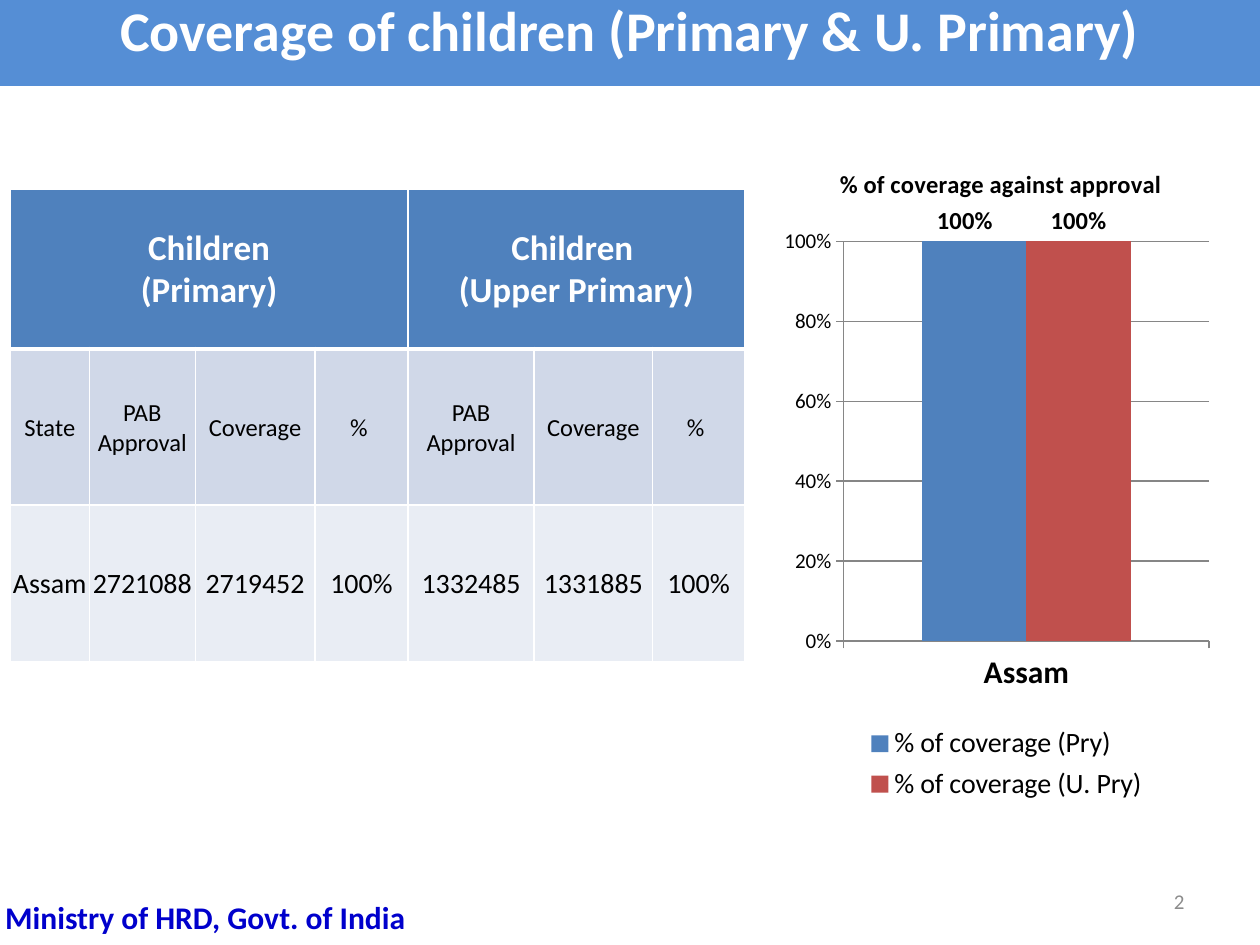
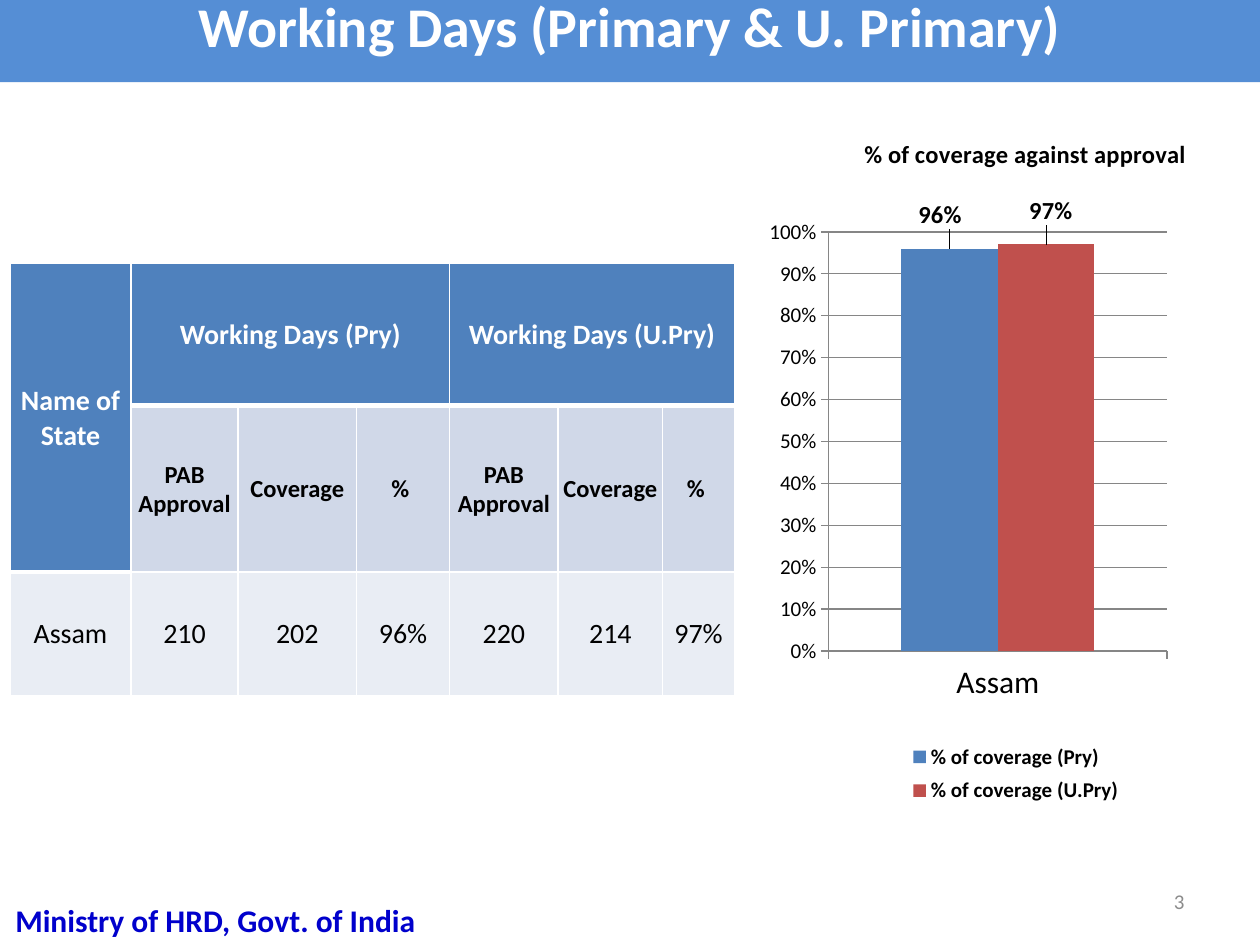
from dataclasses import dataclass
from typing import NamedTuple

from lxml.etree import SubElement
from pptx import Presentation
from pptx.chart.data import CategoryChartData
from pptx.dml.color import RGBColor
from pptx.enum.chart import (XL_CHART_TYPE, XL_LABEL_POSITION, XL_LEGEND_POSITION,
                             XL_TICK_MARK)
from pptx.enum.text import MSO_ANCHOR, MSO_AUTO_SIZE, PP_ALIGN
from pptx.oxml.ns import qn
from pptx.util import Inches, Pt

WIDE, HIGH = Inches(10), Inches(7.5)


@dataclass(frozen=True)
class Theme:
    font: str = "Calibri"
    band: str = "558ED5"
    head: str = "4F81BD"
    sub: str = "D0D8E8"
    row: str = "E9EDF4"
    white: str = "FFFFFF"
    black: str = "000000"
    foot: str = "0000CC"
    gray: str = "8C8C8C"
    axis: str = "868686"
    bars: tuple[str, ...] = ("4F81BD", "C0504D")
    title: int = 32
    large: int = 18
    body: int = 16
    label: int = 14
    small: int = 12


THEME = Theme()


class Box(NamedTuple):
    """Place on the slide, in percent of its width and height."""
    x: float
    y: float
    w: float
    h: float


class Style(NamedTuple):
    size: int
    color: str
    bold: bool = False


class Head(NamedTuple):
    text: str
    col: int
    cols: int
    rows: int = 1


@dataclass(frozen=True)
class Grid:
    box: Box
    cols: list[float]
    rows: list[float]
    heads: list[Head]
    sub: list[str]
    data: list[str]
    size: int
    bold: bool


@dataclass(frozen=True)
class Graph:
    """Inner places are shares of the chart's own size."""
    box: Box
    names: list[str]
    vals: list[float]
    step: float
    bold: bool
    side: XL_LEGEND_POSITION
    key: Style
    title: tuple[float, float]
    plot: tuple[float, ...]
    legend: tuple[float, ...]
    shifts: list[tuple[float, float]]


@dataclass(frozen=True)
class Page:
    num: str
    title: str
    band: Box
    foot: Box
    grid: Grid
    graph: Graph


def span(box: Box) -> tuple[int, ...]:
    return across(box.x), down(box.y), across(box.w), down(box.h)


def across(part: float) -> int:
    return round(WIDE * part / 100)


def down(part: float) -> int:
    return round(HIGH * part / 100)


def paint(fill, color: str) -> None:
    fill.solid()
    fill.fore_color.rgb = RGBColor.from_string(color)


def dress(font, style: Style) -> None:
    font.name = THEME.font
    font.size = Pt(style.size)
    font.bold = style.bold
    font.color.rgb = RGBColor.from_string(style.color)


def write(frame, text: str, style: Style, align: PP_ALIGN = PP_ALIGN.CENTER) -> None:
    for i, line in enumerate(text.split("\n")):
        para = frame.add_paragraph() if i else frame.paragraphs[0]
        para.alignment = align
        run = para.add_run()
        run.text = line
        dress(run.font, style)


def add_title(slide, page: Page) -> None:
    band = slide.shapes.title
    band.left, band.top, band.width, band.height = span(page.band)
    paint(band.fill, THEME.band)
    frame = band.text_frame
    frame.vertical_anchor = MSO_ANCHOR.MIDDLE
    frame.auto_size = MSO_AUTO_SIZE.SHAPE_TO_FIT_TEXT
    write(frame, page.title, Style(THEME.title, THEME.white, True))
    frame.paragraphs[0].line_spacing = 0.9


def add_text(slide, box: Box, text: str, style: Style, align: PP_ALIGN,
             anchor: MSO_ANCHOR) -> None:
    frame = slide.shapes.add_textbox(*span(box)).text_frame
    frame.word_wrap = True
    frame.vertical_anchor = anchor
    write(frame, text, style, align)


def edge(cell, widths: dict[str, int]) -> None:
    """Give the cell white borders, with widths in points by side."""
    props = cell._tc.get_or_add_tcPr()
    for i, (side, width) in enumerate(widths.items()):
        line = SubElement(props, qn(f"a:ln{side}"), w=str(Pt(width)))
        fill = SubElement(line, qn("a:solidFill"))
        SubElement(fill, qn("a:srgbClr"), val=THEME.white)
        props.insert(i, line)


def fill_cell(cell, text: str, style: Style) -> None:
    cell.vertical_anchor = MSO_ANCHOR.MIDDLE
    cell.margin_left = cell.margin_right = cell.margin_top = Inches(0.01)
    cell.margin_bottom = 0
    write(cell.text_frame, text, style)


def add_grid(slide, grid: Grid) -> None:
    table = slide.shapes.add_table(len(grid.rows), len(grid.cols), *span(grid.box)).table
    for col, part in zip(table.columns, grid.cols):
        col.width = across(part)
    for row, part in zip(table.rows, grid.rows):
        row.height = down(part)

    tops = {(r, c) for h in grid.heads for r in range(h.rows)
            for c in range(h.col, h.col + h.cols)}
    tints = (THEME.head, THEME.sub, THEME.row)
    for r, tint in enumerate(tints):
        for c in range(len(grid.cols)):
            cell = table.cell(r, c)
            is_top = (r, c) in tops
            paint(cell.fill, THEME.head if is_top else tint)
            above = 3 if (r - 1, c) in tops and not is_top else 1
            edge(cell, {"L": 1, "R": 1, "T": above, "B": 3 if is_top else 1})

    for head in grid.heads:
        cell = table.cell(0, head.col)
        cell.merge(table.cell(head.rows - 1, head.col + head.cols - 1))
        fill_cell(cell, head.text, Style(grid.size, THEME.white, True))
    styles = (Style(THEME.label, THEME.black, grid.bold), Style(THEME.body, THEME.black))
    for r, (texts, style) in enumerate(zip((grid.sub, grid.data), styles), 1):
        for c, text in enumerate(texts):
            if (r, c) not in tops:
                fill_cell(table.cell(r, c), text, style)


def place(node, spot: tuple[float, ...], at: int = 1, mode: str = "edge") -> None:
    """Put a manual layout into a chart part as its child number `at`."""
    for old in node.findall(qn("c:layout")):
        node.remove(old)
    layout = SubElement(node, qn("c:layout"))
    manual = SubElement(layout, qn("c:manualLayout"))
    if at == 0:
        SubElement(manual, qn("c:layoutTarget"), val="inner")
    if mode == "edge":
        for axis in "xy":
            SubElement(manual, qn(f"c:{axis}Mode"), val=mode)
    for name, part in zip("xywh", spot):
        SubElement(manual, qn(f"c:{name}"), val=str(part))
    node.insert(at, layout)


def add_graph(slide, graph: Graph) -> None:
    data = CategoryChartData(number_format="0%")
    data.categories = ["Assam"]
    for name, val in zip(graph.names, graph.vals):
        data.add_series(name, [val])
    chart = slide.shapes.add_chart(XL_CHART_TYPE.COLUMN_CLUSTERED, *span(graph.box),
                                   data).chart
    dress(chart.font, Style(THEME.large, THEME.black))
    label = Style(THEME.label, THEME.black, True)
    chart.has_title = True
    write(chart.chart_title.text_frame, "% of coverage against approval", label)

    chart.has_legend = True
    chart.legend.position = graph.side
    chart.legend.include_in_layout = False
    dress(chart.legend.font, graph.key)

    cat, val = chart.category_axis, chart.value_axis
    dress(cat.tick_labels.font, Style(THEME.large, THEME.black, graph.bold))
    dress(val.tick_labels.font, Style(THEME.small, THEME.black))
    val.tick_labels.number_format = "0%"
    val.tick_labels.number_format_is_linked = False
    val.minimum_scale, val.maximum_scale, val.major_unit = 0, 1, graph.step
    val.has_major_gridlines = True
    for axis in (cat, val):
        axis.major_tick_mark = XL_TICK_MARK.OUTSIDE
    for part in (cat.format, val.format, val.major_gridlines.format):
        paint(part.line.fill, THEME.axis)
        part.line.width = Pt(0.75)

    plot = chart.plots[0]
    plot.gap_width = 150
    plot.vary_by_categories = False
    for series, color in zip(plot.series, THEME.bars):
        paint(series.format.fill, color)
        labels = series.data_labels
        labels.show_value = True
        labels.number_format = "0%"
        labels.number_format_is_linked = False
        dress(labels.font, label)
        point = series.points[0].data_label
        dress(point.font, label)
        point.position = XL_LABEL_POSITION.OUTSIDE_END

    root = chart.element
    place(root.xpath(".//c:plotArea")[0], graph.plot, at=0)
    place(root.xpath(".//c:chart/c:title")[0], graph.title)
    place(root.xpath(".//c:legend")[0], graph.legend)
    for node, shift in zip(root.xpath(".//c:dLbl"), graph.shifts):
        place(node, shift, mode="factor")


def add_page(deck, page: Page) -> None:
    slide = deck.slides.add_slide(deck.slide_layouts[5])
    add_title(slide, page)
    add_text(slide, Box(71.7, 92.67, 23.3, 5.33), page.num,
             Style(THEME.small, THEME.gray), PP_ALIGN.RIGHT, MSO_ANCHOR.MIDDLE)
    add_grid(slide, page.grid)
    add_graph(slide, page.graph)
    add_text(slide, page.foot, "Ministry of HRD, Govt. of India",
             Style(THEME.large, THEME.foot, True), PP_ALIGN.CENTER, MSO_ANCHOR.TOP)


TRIO = ["PAB Approval", "Coverage", "% "]
PAGES = [
    Page("2", "Coverage of children (Primary & U. Primary)",
         Box(0, -0.4, 100, 7.87), Box(-3.3, 94.4, 39.2, 5.33),
         Grid(Box(0.8, 20, 58.3, 50), [6.3, 8.4, 9.5, 7.4, 10, 9.4, 7.3],
              [16.93, 16.53, 16.53],
              [Head("Children\n(Primary)", 0, 4), Head("Children \n(Upper Primary)", 4, 3)],
              ["State", *TRIO, *TRIO],
              ["Assam", "2721088", "2719452", "100%", "1332485", "1331885", "100%"],
              20, False),
         Graph(Box(60.8, 14.4, 36.7, 71.07), ["% of coverage (Pry)", "% of coverage (U. Pry)"],
               [1, 1], 0.2, True, XL_LEGEND_POSITION.BOTTOM, Style(THEME.body, THEME.black),
               (0.15, 0.04), (0.168, 0.157, 0.79, 0.595), (0.19, 0.87, 0.66, 0.13),
               [(-0.02, 0), (0, 0)])),
    Page("3", "Working Days (Primary & U. Primary)",
         Box(0, -0.8, 100, 7.87), Box(0, 94.67, 34.2, 5.33),
         Grid(Box(0.8, 27.87, 57.5, 45.87), [9.6, 8.5, 9.4, 7.4, 8.6, 8.3, 5.7],
              [15.07, 17.6, 13.07],
              [Head("Name of State", 0, 1, 2), Head("Working Days (Pry)", 1, 3),
               Head("Working Days (U.Pry)", 4, 3)],
              ["", *TRIO, *TRIO],
              ["Assam", "210", "202", "96%", "220", "214", "97%"], THEME.body, True),
         Graph(Box(60, 13.33, 37.5, 73.33), ["% of coverage (Pry)", "% of coverage (U.Pry)"],
               [0.96, 0.97], 0.1, False, XL_LEGEND_POSITION.RIGHT,
               Style(THEME.small, THEME.black, True),
               (0.22, 0.01), (0.154, 0.153, 0.716, 0.605), (0.3, 0.88, 0.5, 0.11),
               [(-0.02, -0.02), (0.01, -0.02)])),
]


def main() -> None:
    deck = Presentation()
    deck.slide_width, deck.slide_height = WIDE, HIGH
    for page in PAGES:
        add_page(deck, page)
    deck.save("out.pptx")


if __name__ == "__main__":
    main()
